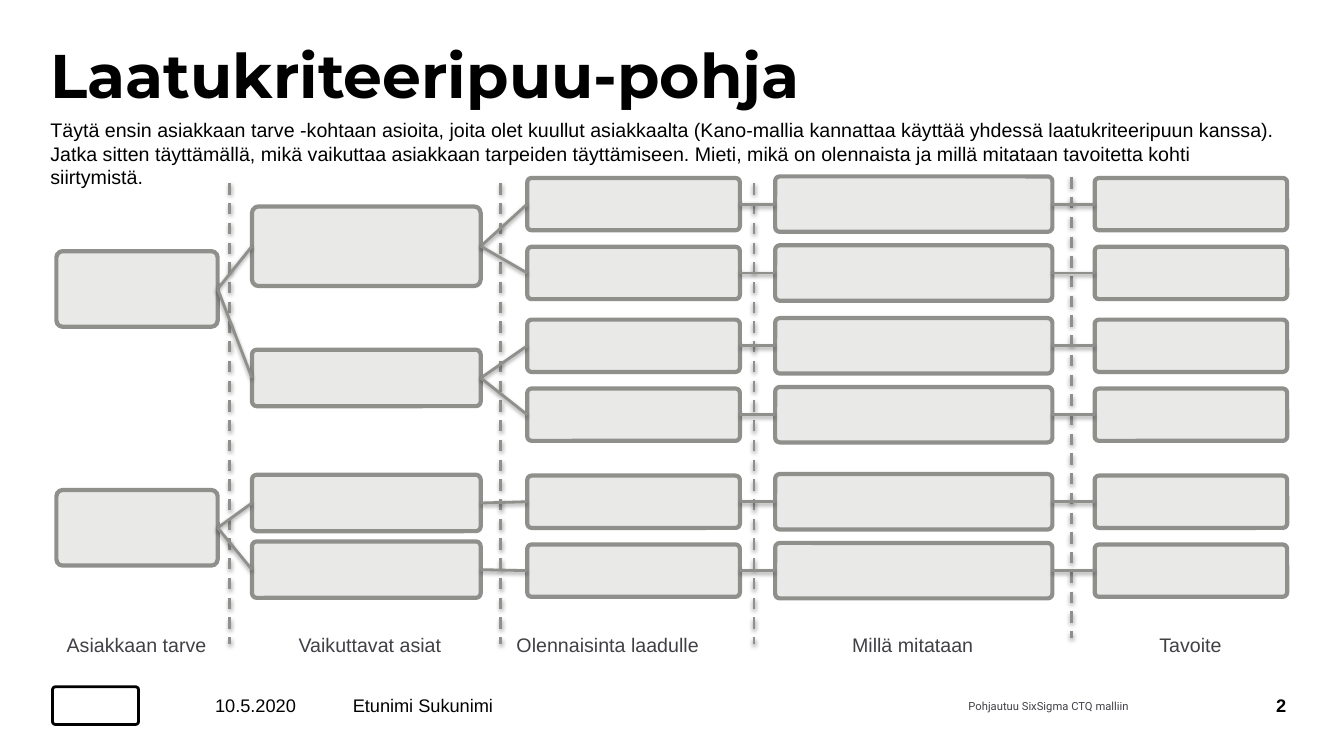
"""Build a quality criteria tree template slide."""
from lxml.etree import SubElement
from pptx import Presentation
from pptx.dml.color import RGBColor
from pptx.enum.dml import MSO_LINE
from pptx.enum.shapes import MSO_CONNECTOR, MSO_SHAPE
from pptx.enum.text import MSO_ANCHOR, PP_ALIGN
from pptx.oxml.ns import qn
from pptx.util import Pt

BLACK, DARK, GREY, PALE = "000000", "404046", "8F8F8C", "E9E9E8"
LEFT, CENTER, RIGHT = PP_ALIGN.LEFT, PP_ALIGN.CENTER, PP_ALIGN.RIGHT

TITLE = "Laatukriteeripuu-pohja"
INTRO = (
    "Täytä ensin asiakkaan tarve -kohtaan asioita, joita olet kuullut asiakkaalta "
    "(Kano-mallia kannattaa käyttää yhdessä laatukriteeripuun kanssa). Jatka sitten "
    "täyttämällä, mikä vaikuttaa asiakkaan tarpeiden täyttämiseen. Mieti, mikä on "
    "olennaista ja millä mitataan tavoitetta kohti siirtymistä."
)
FOOTER = [
    ("10.5.2020", 131, 103, CENTER, False),
    ("Etunimi Sukunimi", 252, 324, LEFT, False),
    ("2", 821.5, 97.2, RIGHT, True),
]
SOURCE_NOTE = "Pohjautuu SixSigma CTQ malliin"

LABELS = [
    ("Asiakkaan tarve", 36, 123.1),
    ("Vaikuttavat asiat", 205.2, 118.1),
    ("Olennaisinta laadulle", 361.4, 145.4),
    ("Millä mitataan", 601.2, 101.5),
    ("Tavoite", 820.1, 60.5),
]
DIVIDERS = [(164.2, 131), (357.8, 131), (538.6, 131), (765.4, 126.7)]
DIVIDER_LENGTH = 329

PAIR_TOPS, PAIR_GAP = [145.8, 247, 358.4], 49.2
LEAF_CENTERS = [y + k * PAIR_GAP for y in PAIR_TOPS for k in range(2)]
COLUMNS = [
    {"x": 40.3, "w": 115.2, "heights": [54] * 2,
     "centers": [206.4, 377], "parents": []},
    {"x": 180, "w": 163.4, "heights": [56.9, 40.3, 40.3, 40.3],
     "centers": [175.9, 270, 359.3, 406.9], "parents": [0, 0, 1, 1]},
    {"x": 376.6, "w": 151.9, "heights": [37.4] * 6,
     "centers": LEAF_CENTERS, "parents": [0, 0, 1, 1, 2, 3]},
    {"x": 553.7, "w": 198, "heights": [39.6] * 6,
     "centers": LEAF_CENTERS, "parents": range(6)},
    {"x": 781.9, "w": 137.5, "heights": [37.4] * 6,
     "centers": LEAF_CENTERS, "parents": range(6)},
]


def color(value):
    return RGBColor.from_string(value)


def add_text(s, text, x, y, w, h, size, ink=BLACK, font="Arial", bold=False,
             align=LEFT, anchor=MSO_ANCHOR.TOP, inset=(0, 0), wrap=True):
    tf = s.shapes.add_textbox(Pt(x), Pt(y), Pt(w), Pt(h)).text_frame
    tf.word_wrap, tf.vertical_anchor = wrap, anchor
    tf.margin_left = tf.margin_right = Pt(inset[0])
    tf.margin_top = tf.margin_bottom = Pt(inset[1])
    p = tf.paragraphs[0]
    p.text, p.alignment = text, align
    p.font.name, p.font.size, p.font.bold = font, Pt(size), bold
    p.font.color.rgb = color(ink)
    return p


def add_box(s, x, y, w, h, line, width, fill=None):
    box = s.shapes.add_shape(MSO_SHAPE.ROUNDED_RECTANGLE, Pt(x), Pt(y), Pt(w), Pt(h))
    box.adjustments[0] = 0.083
    box.shadow.inherit = False
    box.line.color.rgb, box.line.width = color(line), Pt(width)
    if fill:
        box.fill.solid()
        box.fill.fore_color.rgb = color(fill)
    else:
        box.fill.background()
    return box


def add_line(s, x1, y1, x2, y2):
    line = s.shapes.add_connector(MSO_CONNECTOR.STRAIGHT, Pt(x1), Pt(y1), Pt(x2), Pt(y2))
    line.line.color.rgb, line.line.width = color(GREY), Pt(2)
    effects = SubElement(line.element.spPr, qn("a:effectLst"))
    shadow = SubElement(effects, qn("a:outerShdw"), blurRad=str(Pt(3.1)),
                        dist=str(Pt(1.6)), dir="5400000", rotWithShape="0")
    ink = SubElement(shadow, qn("a:srgbClr"), val=BLACK)
    SubElement(ink, qn("a:alpha"), val="38000")
    return line


def add_tree(s):
    tree = [
        [add_box(s, col["x"], cy - h / 2, col["w"], h, GREY, 3, PALE)
         for cy, h in zip(col["centers"], col["heights"])]
        for col in COLUMNS
    ]
    for previous, boxes, col in zip(tree, tree[1:], COLUMNS[1:]):
        for parent, box in zip(col["parents"], boxes):
            link = add_line(s, 0, 0, 0, 0)
            link.begin_connect(previous[parent], 3)
            link.end_connect(box, 1)


def main():
    prs = Presentation()
    prs.slide_width, prs.slide_height = Pt(960), Pt(540)
    s = prs.slides.add_slide(prs.slide_layouts[6])

    add_box(s, 37.5, 490.5, 61.5, 27, BLACK, 2)
    p = add_text(s, TITLE, 36, 32.4, 885, 51.8, 44, font="Montserrat", bold=True)
    p.line_spacing = 0.9
    add_text(s, INTRO, 36, 84.2, 885, 35.3, 14)
    for text, x, w, align, bold in FOOTER:
        add_text(s, text, x, 493.9, w, 20.2, 13, bold=bold, align=align,
                 anchor=MSO_ANCHOR.MIDDLE)
    add_text(s, SOURCE_NOTE, 684.7, 496.1, 168.5, 16.6, 8, DARK, "Roboto",
             inset=(7.2, 3.6))

    for x, y in DIVIDERS:
        add_line(s, x, y, x, y + DIVIDER_LENGTH).line.dash_style = MSO_LINE.DASH
    for text, x, w in LABELS:
        add_text(s, text, x, 448.6, w, 24.5, 14, DARK, align=CENTER,
                 inset=(7.2, 3.6), wrap=False)
    add_tree(s)
    prs.save("out.pptx")


if __name__ == "__main__":
    main()
